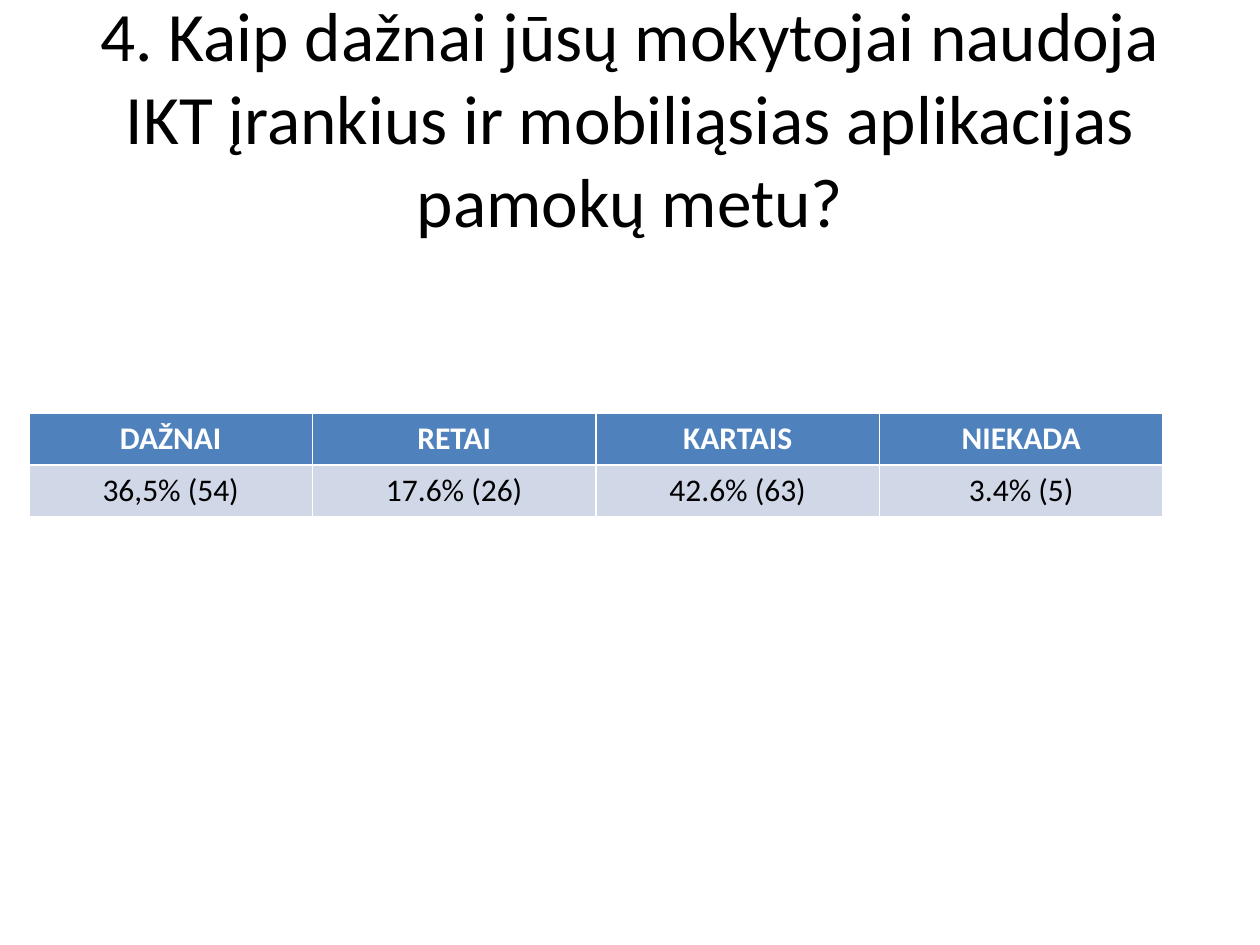
from pptx import Presentation
from pptx.dml.color import RGBColor
from pptx.enum.text import MSO_ANCHOR, MSO_AUTO_SIZE, PP_ALIGN
from pptx.util import Inches, Pt


def style(p, size, color, bold=False):
    p.alignment = PP_ALIGN.CENTER
    p.font.name = "Calibri"
    p.font.size = Pt(size)
    p.font.bold = bold
    p.font.color.rgb = RGBColor.from_string(color)


prs = Presentation()
prs.slide_width, prs.slide_height = Inches(10), Inches(7.5)
W, H = prs.slide_width, prs.slide_height
s = prs.slides.add_slide(prs.slide_layouts[5])

title = s.shapes.title
title.left, title.top = int(W * 0.05), int(H * 0.04)
title.width, title.height = int(W * 0.9), Inches(1.25)
tf = title.text_frame
tf.text = "4. Kaip dažnai jūsų mokytojai naudoja IKT įrankius ir mobiliąsias aplikacijas pamokų metu?"
tf.word_wrap = True
tf.auto_size = MSO_AUTO_SIZE.NONE
tf.vertical_anchor = MSO_ANCHOR.MIDDLE
style(tf.paragraphs[0], 39.6, "000000")

rows = [
    ["DAŽNAI", "RETAI", "KARTAIS", "NIEKADA"],
    ["36,5% (54)", "17.6% (26)", "42.6% (63)", "3.4% (5)"],
]
looks = [("4F81BD", "FFFFFF", True), ("D0D8E8", "000000", False)]
row_h = Inches(0.41)
table = s.shapes.add_table(
    len(rows), len(rows[0]), Inches(0.23), Inches(3.28), int(W * 0.9), row_h * len(rows)
).table

for i, (row, (fill, color, bold)) in enumerate(zip(rows, looks)):
    table.rows[i].height = row_h
    for j, text in enumerate(row):
        cell = table.cell(i, j)
        cell.text = text
        cell.fill.solid()
        cell.fill.fore_color.rgb = RGBColor.from_string(fill)
        style(cell.text_frame.paragraphs[0], 18, color, bold)

prs.save("out.pptx")
